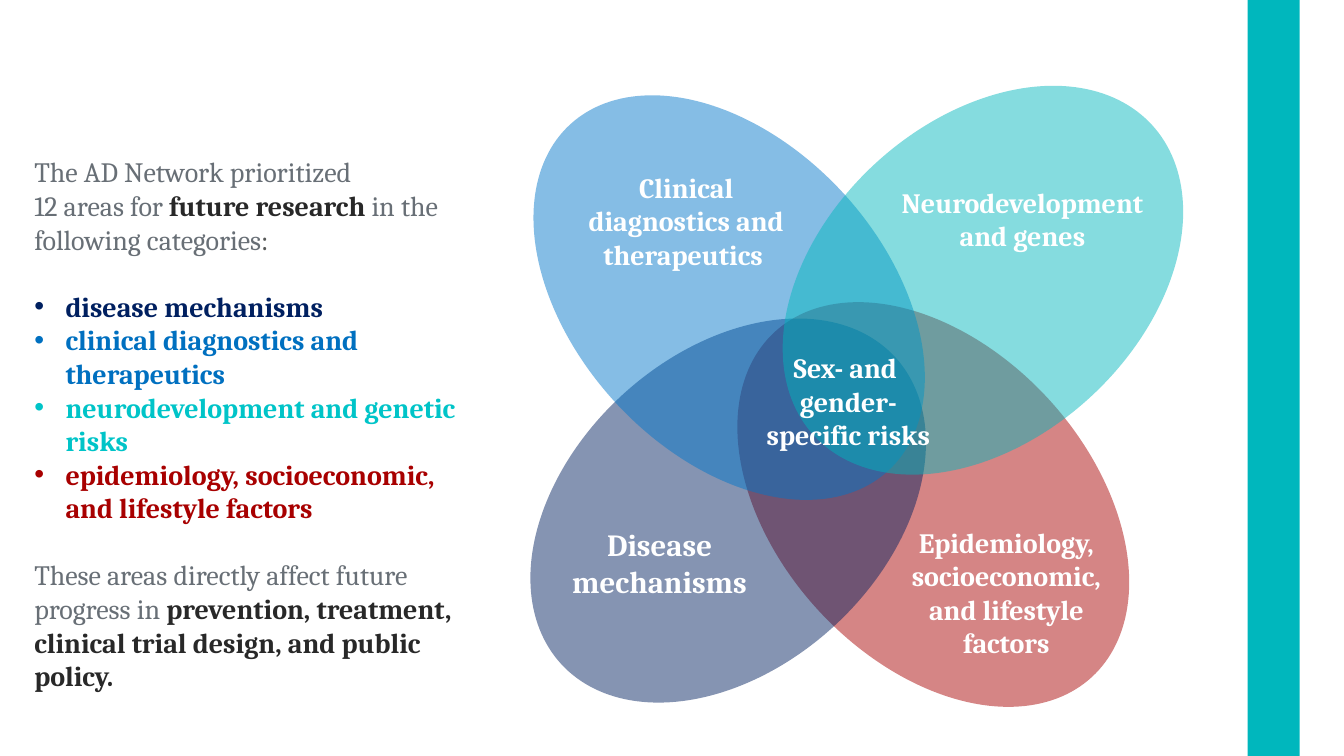
from pptx import Presentation
from pptx.dml.color import RGBColor
from pptx.enum.shapes import MSO_SHAPE
from pptx.enum.text import MSO_ANCHOR, PP_ALIGN
from pptx.oxml.ns import qn
from pptx.oxml.xmlchemy import OxmlElement
from pptx.util import Inches, Pt

FONT = "Cambria"
WHITE = RGBColor(0xFF, 0xFF, 0xFF)
TEAL = RGBColor(0x00, 0xB7, 0xBD)
RED = RGBColor(0xA8, 0x00, 0x00)
NAVY = RGBColor(0x00, 0x20, 0x60)
BLUE = RGBColor(0x00, 0x76, 0xCA)
GREY = RGBColor(0x68, 0x6F, 0x76)
COLON_GREY = RGBColor(0x56, 0x58, 0x57)
DARK = RGBColor(0x28, 0x28, 0x28)
BULLET_BLUE = RGBColor(0x00, 0x70, 0xC0)
BULLET_TEAL = RGBColor(0x00, 0xC4, 0xC8)

BODY_SIZE = 40
SECTION_GAP = 48
BULLET_INDENT = 0.62
PETAL_ROTATION = 317.4
PETAL_OPACITY = 48
INSET = (0.04, 0.04)

BAND = (24.76, 0, 1.03, 15)
SUMMARY_BOX = (0.64, 2.98, 8.63, 10.85)

PETALS = [
    ((15.42, 5.36, 6.2, 9.3), RED),
    ((9.95, 7.02, 9, 6.22), NAVY),
    ((11.4, 1.24, 6.14, 9.33), BLUE),
    ((14.95, 2.41, 9.11, 6.3), TEAL),
]

LABELS = [
    ((17.9, 10.36, 4.14, 2.78), ["Epidemiology, socioeconomic, and lifestyle factors"],
     BODY_SIZE, MSO_ANCHOR.MIDDLE, INSET),
    ((11.47, 3.33, 4.29, 2.1), ["Clinical diagnostics and therapeutics "],
     BODY_SIZE, MSO_ANCHOR.MIDDLE, INSET),
    ((17.5, 3.63, 5.58, 1.43), ["Neurodevelopment and genes"],
     BODY_SIZE, MSO_ANCHOR.MIDDLE, INSET),
    ((11.01, 10.39, 4.16, 1.58), ["Disease mechanisms"],
     44, MSO_ANCHOR.TOP, (0.1, 0.05)),
    ((14.77, 6.91, 4.13, 2.1), ["Sex- and ", "gender-", "specific risks"],
     BODY_SIZE, MSO_ANCHOR.MIDDLE, INSET),
]

INTRO = [
    [("The AD Network prioritized", GREY, False)],
    [("12 areas for ", GREY, False), ("future research ", DARK, True),
     ("in the following categories", GREY, False), (":", COLON_GREY, False)],
]
CATEGORIES = [
    [("disease mechanisms", NAVY, True)],
    [("clinical diagnostics and therapeutics", BULLET_BLUE, True)],
    [("neurodevelopment and genetic risks", BULLET_TEAL, True)],
    [("epidemiology, socioeconomic, and lifestyle factors", RED, True)],
]
CONCLUSION = [
    [("These areas directly affect future progress in ", GREY, False),
     ("prevention, treatment, clinical trial design, and public policy.", DARK, True)],
]


def add_filled(slide, preset, box, color):
    shape = slide.shapes.add_shape(preset, *map(Inches, box))
    shape.shadow.inherit = False
    shape.fill.solid()
    shape.fill.fore_color.rgb = color
    shape.line.fill.background()
    return shape


def add_petal(slide, box, color):
    petal = add_filled(slide, MSO_SHAPE.OVAL, box, color)
    petal.rotation = PETAL_ROTATION
    alpha = OxmlElement("a:alpha")
    alpha.set("val", str(PETAL_OPACITY * 1000))
    petal.fill._xPr.find(qn("a:solidFill"))[0].append(alpha)


def add_text_frame(slide, box, anchor, inset):
    frame = slide.shapes.add_textbox(*map(Inches, box)).text_frame
    frame.word_wrap = True
    frame.vertical_anchor = anchor
    frame.margin_left = frame.margin_right = Inches(inset[0])
    frame.margin_top = frame.margin_bottom = Inches(inset[1])
    return frame


def style(font, size, color, bold):
    font.name = FONT
    font.size = Pt(size)
    font.color.rgb = color
    font.bold = bold


def add_label(slide, box, lines, size, anchor, inset):
    frame = add_text_frame(slide, box, anchor, inset)
    frame.text = "\n".join(lines)
    for paragraph in frame.paragraphs:
        paragraph.alignment = PP_ALIGN.CENTER
        for run in paragraph.runs:
            style(run.font, size, WHITE, True)


def add_bullet(paragraph):
    properties = paragraph._p.get_or_add_pPr()
    properties.set("marL", str(Inches(BULLET_INDENT)))
    properties.set("indent", str(-Inches(BULLET_INDENT)))
    typeface = OxmlElement("a:buFont")
    typeface.set("typeface", "Arial")
    bullet = OxmlElement("a:buChar")
    bullet.set("char", "•")
    properties.extend([typeface, bullet])


def add_summary(slide):
    frame = add_text_frame(slide, SUMMARY_BOX, MSO_ANCHOR.MIDDLE, INSET)
    paragraph = frame.paragraphs[0]
    for section in (INTRO, CATEGORIES, CONCLUSION):
        for index, pieces in enumerate(section):
            if section is not INTRO or index:
                paragraph = frame.add_paragraph()
            if section is CATEGORIES:
                add_bullet(paragraph)
            if section is not INTRO and index == 0:
                paragraph.space_before = Pt(SECTION_GAP)
            for text, color, bold in pieces:
                run = paragraph.add_run()
                run.text = text
                style(run.font, BODY_SIZE, color, bold)


def main():
    presentation = Presentation()
    presentation.slide_width = Inches(26.67)
    presentation.slide_height = Inches(15)
    slide = presentation.slides.add_slide(presentation.slide_layouts[6])
    add_filled(slide, MSO_SHAPE.RECTANGLE, BAND, TEAL)
    for petal in PETALS:
        add_petal(slide, *petal)
    for label in LABELS:
        add_label(slide, *label)
    add_summary(slide)
    presentation.save("out.pptx")


if __name__ == "__main__":
    main()
